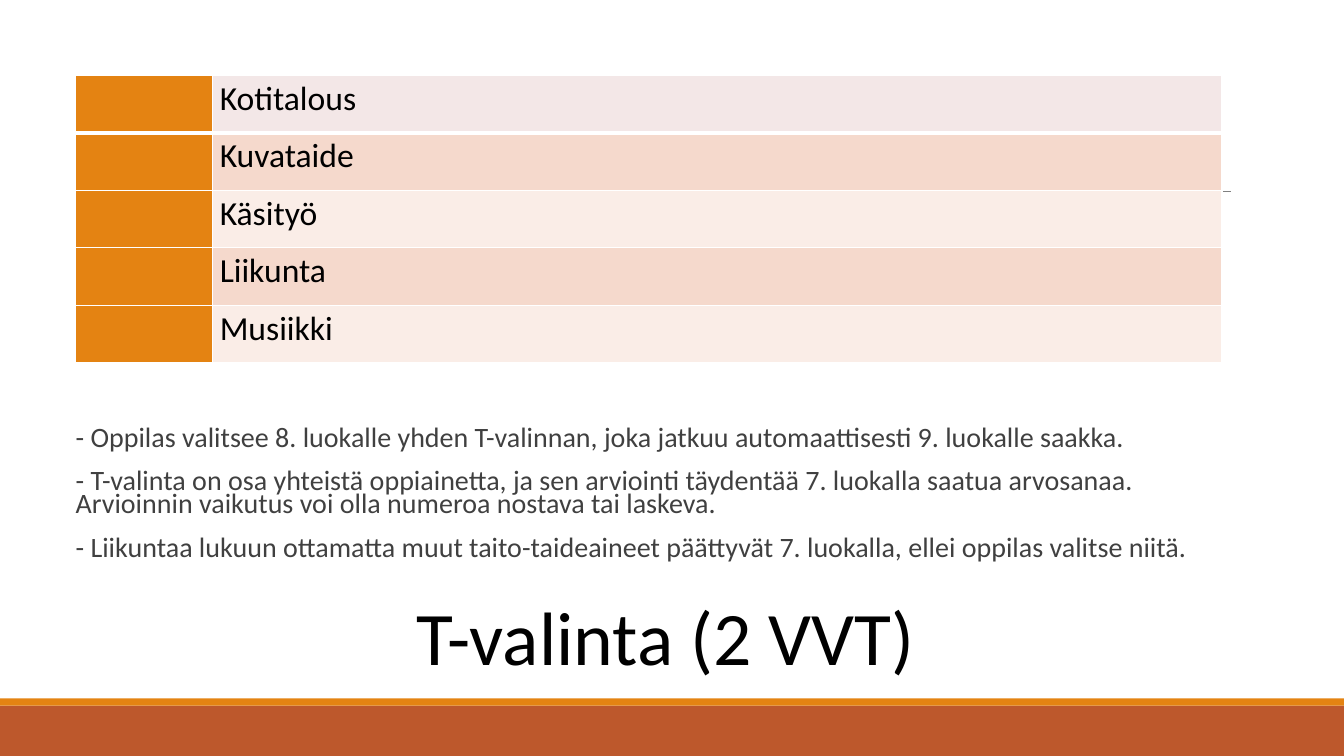
"""Build the T-valinta slide with its subject table and rules."""
from dataclasses import dataclass

import lxml.etree
import pptx
import pptx.dml.color
import pptx.enum.shapes
import pptx.enum.text
import pptx.oxml.ns
import pptx.util

RGBColor = pptx.dml.color.RGBColor
WHITE = RGBColor(0xFF, 0xFF, 0xFF)
BLACK = RGBColor(0x00, 0x00, 0x00)
TEXT_GREY = RGBColor(0x40, 0x40, 0x40)
LINE_GREY = RGBColor(0x80, 0x80, 0x80)
ORANGE = RGBColor(0xE4, 0x83, 0x12)
RUST = RGBColor(0xBD, 0x58, 0x2C)
ROSE = RGBColor(0xF3, 0xE7, 0xE7)
PEACH = RGBColor(0xF5, 0xD9, 0xCC)
PALE_PEACH = RGBColor(0xFA, 0xED, 0xE7)

EMU_PER_PX = 9144
COLUMN_WIDTHS = (136, 1001)
ROW_HEIGHT = 57
TITLE_FORMAT = {"size": pptx.util.Pt(54), "name": "Calibri"}
RULE_FORMAT = {"size": pptx.util.Pt(20), "name": "Calibri"}
SUBJECT_FORMAT = {"size": pptx.util.Pt(24), "name": "Calibri"}
RULES = (
    "- Oppilas valitsee 8. luokalle yhden T-valinnan, joka jatkuu automaattisesti 9. luokalle saakka.",
    "- T-valinta on osa yhteistä oppiainetta, ja sen arviointi täydentää 7. luokalla saatua arvosanaa. "
    "Arvioinnin vaikutus voi olla numeroa nostava tai laskeva.",
    "- Liikuntaa lukuun ottamatta muut taito-taideaineet päättyvät 7. luokalla, ellei oppilas valitse niitä.",
)


@dataclass(frozen=True)
class Band:
    """A full-width footer band."""
    top: int
    height: int
    color: RGBColor


@dataclass(frozen=True)
class Subject:
    """A table row naming one subject."""
    name: str
    fill: RGBColor


BANDS = (Band(700, 50, RUST), Band(693, 7, ORANGE))
SUBJECTS = (
    Subject("Kotitalous", ROSE),
    Subject("Kuvataide", PEACH),
    Subject("Käsityö", PALE_PEACH),
    Subject("Liikunta", PEACH),
    Subject("Musiikki", PALE_PEACH),
)


def px(length: int) -> pptx.util.Emu:
    """Turn px into EMU."""
    return pptx.util.Emu(length * EMU_PER_PX)


def set_values(target: object, values: dict) -> None:
    """Set each named attribute of the target."""
    for name, value in values.items():
        setattr(target, name, value)


def place(shape, left: int, top: int, width: int, height: int) -> None:
    """Move and size a shape."""
    set_values(shape, {"left": px(left), "top": px(top), "width": px(width), "height": px(height)})


def format_text(para, values: dict, color: RGBColor) -> None:
    """Apply font values and a colour to a paragraph."""
    set_values(para.font, values)
    para.font.color.rgb = color


def draw_band(page, band: Band) -> None:
    """Draw a footer band."""
    shape = page.shapes.add_shape(
        pptx.enum.shapes.MSO_SHAPE.RECTANGLE, 0, px(band.top), px(1333), px(band.height))
    shape.shadow.inherit = False
    shape.fill.solid()
    shape.fill.fore_color.rgb = band.color
    shape.line.fill.background()


def draw_rule_line(page) -> None:
    """Draw the thin grey line behind the table."""
    line = page.shapes.add_connector(
        pptx.enum.shapes.MSO_CONNECTOR.STRAIGHT, px(131), px(190), px(1221), px(190))
    line.line.color.rgb = LINE_GREY
    line.line.width = pptx.util.Pt(0.5)
    lxml.etree.SubElement(line._element.spPr, pptx.oxml.ns.qn("a:effectLst"))


def write_title(page) -> None:
    """Fill and format the title placeholder."""
    title = page.shapes.title
    place(title, 403, 580, 527, 101)
    title.text_frame.text = "T-valinta (2 VVT)"
    para = title.text_frame.paragraphs[0]
    para.alignment = pptx.enum.text.PP_ALIGN.LEFT
    format_text(para, TITLE_FORMAT, BLACK)


def write_rules(page) -> None:
    """Fill and format the body placeholder."""
    body = page.placeholders[1]
    place(body, 75, 360, 1137, 239)
    frame = body.text_frame
    set_values(frame, {
        "margin_left": 0, "margin_right": 0, "margin_top": px(65), "margin_bottom": px(5),
        "vertical_anchor": pptx.enum.text.MSO_ANCHOR.TOP,
    })
    frame.text = "\n".join(RULES)
    for index, para in enumerate(frame.paragraphs):
        properties = para._p.get_or_add_pPr()
        set_margins = {"marL": "0", "indent": "0"}
        for name, value in set_margins.items():
            properties.set(name, value)
        lxml.etree.SubElement(properties, pptx.oxml.ns.qn("a:buNone"))
        set_values(para, {
            "line_spacing": 0.7,
            "space_before": pptx.util.Pt(12 if index else 0),
            "space_after": pptx.util.Pt(2),
        })
        format_text(para, RULE_FORMAT, TEXT_GREY)


def style_cell(cell, fill: RGBColor, top: int, bottom: int) -> None:
    """Give a cell white borders and a plain fill."""
    properties = cell._tc.get_or_add_tcPr()
    for side, points in {"L": 1, "R": 1, "T": top, "B": bottom}.items():
        border = lxml.etree.SubElement(
            properties, pptx.oxml.ns.qn(f"a:ln{side}"), w=str(pptx.util.Pt(points)))
        solid = lxml.etree.SubElement(border, pptx.oxml.ns.qn("a:solidFill"))
        lxml.etree.SubElement(solid, pptx.oxml.ns.qn("a:srgbClr"), val=str(WHITE))
    cell.fill.solid()
    cell.fill.fore_color.rgb = fill


def draw_subjects(page) -> None:
    """Draw the table of subjects."""
    table = page.shapes.add_table(
        len(SUBJECTS), len(COLUMN_WIDTHS), px(75), px(75),
        px(sum(COLUMN_WIDTHS)), px(ROW_HEIGHT * len(SUBJECTS))).table
    for column, width in zip(table.columns, COLUMN_WIDTHS):
        column.width = px(width)
    for index, subject in enumerate(SUBJECTS):
        table.rows[index].height = px(ROW_HEIGHT)
        marker, label = table.rows[index].cells
        for cell, fill in ((marker, ORANGE), (label, subject.fill)):
            style_cell(cell, fill, 3 if index == 1 else 1, 3 if index == 0 else 1)
        set_values(label, {
            "margin_left": px(7), "margin_right": px(7), "margin_top": 0, "margin_bottom": 0})
        label.text_frame.text = subject.name
        para = label.text_frame.paragraphs[0]
        para.line_spacing = 1.07
        format_text(para, SUBJECT_FORMAT, BLACK)
        para.font.bold = False


def main() -> None:
    """Build and save the deck."""
    deck = pptx.Presentation()
    set_values(deck, {"slide_width": px(1333), "slide_height": px(750)})
    page = deck.slides.add_slide(deck.slide_layouts[1])
    for band in BANDS:
        draw_band(page, band)
    draw_rule_line(page)
    write_rules(page)
    draw_subjects(page)
    write_title(page)
    deck.save("out.pptx")


if __name__ == "__main__":
    main()
